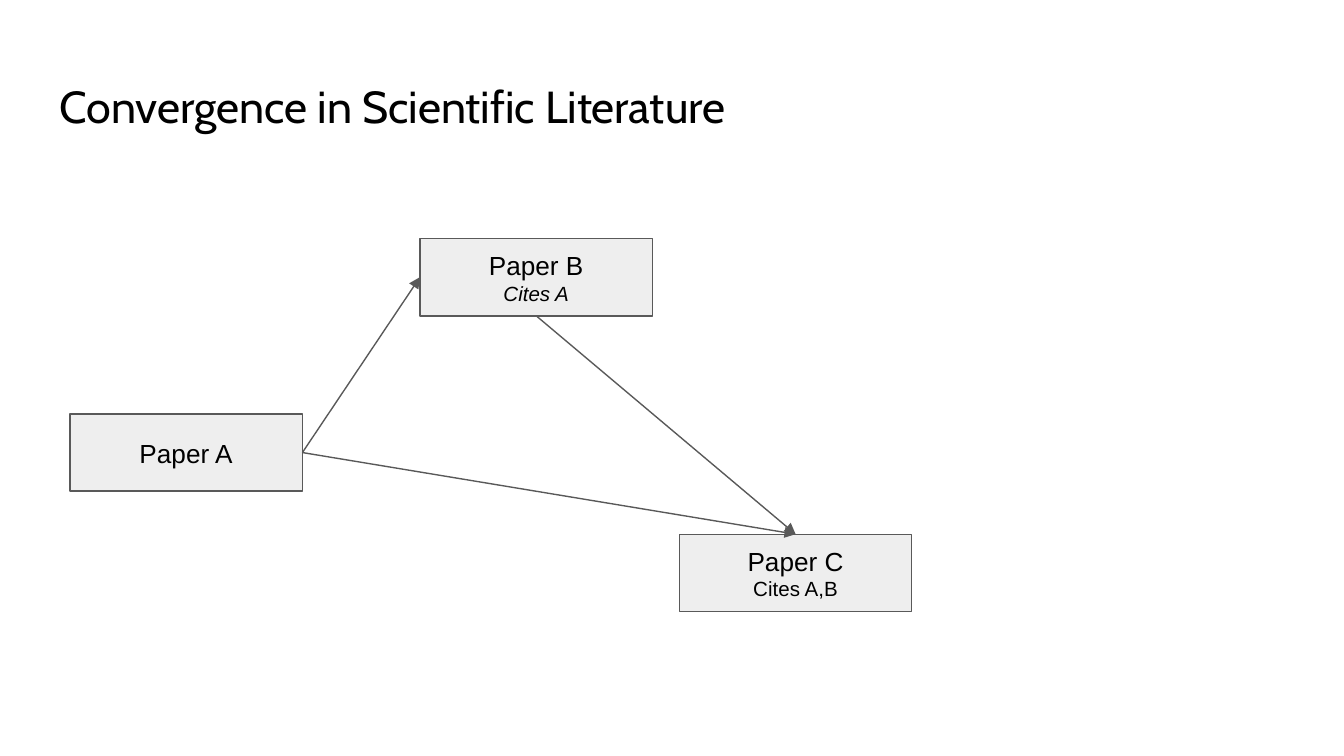
import dataclasses
import typing

import pptx
import pptx.dml.color
import pptx.enum.shapes
import pptx.enum.text
import pptx.oxml.ns
import pptx.util
from lxml import etree

PX = 4572  # EMU in one px, 200 px to the inch
WIDE, HIGH = 346, 115
PAD = 20
COLORS = {"fill": "EEEEEE", "line": "595959", "text": "000000"}
TOP, LEFT, BOTTOM, RIGHT = range(4)


@dataclasses.dataclass
class Run:
    text: str
    size: int
    font: str = "Arial"
    italic: bool = False


@dataclasses.dataclass
class Paper:
    key: str
    x: int
    y: int
    lines: list[Run]


class Cite(typing.NamedTuple):
    start: str
    exit: int
    end: str
    entry: int


PAPERS = [
    Paper("A", 104, 616, [Run("Paper A", 14)]),
    Paper("B", 625, 355, [Run("Paper B", 14), Run("Cites A", 11, italic=True)]),
    Paper("C", 1011, 795, [Run("Paper C", 14), Run("Cites A,B", 11)]),
]
CITES = [
    Cite("A", RIGHT, "B", LEFT),
    Cite("A", RIGHT, "C", TOP),
    Cite("B", BOTTOM, "C", TOP),
]


def px(num: int) -> pptx.util.Emu:
    return pptx.util.Emu(num * PX)


def color(name: str) -> pptx.dml.color.RGBColor:
    return pptx.dml.color.RGBColor.from_string(COLORS[name])


def write(shape, lines: list[Run], align, anchor) -> None:
    """Fill the shape with one paragraph per run."""
    frame = shape.text_frame
    frame.word_wrap = True
    frame.vertical_anchor = anchor
    frame.margin_left = frame.margin_right = px(PAD)
    frame.margin_top = frame.margin_bottom = px(PAD)
    for num, line in enumerate(lines):
        para = frame.add_paragraph() if num else frame.paragraphs[0]
        para.alignment = align
        run = para.add_run()
        run.text = line.text
        run.font.name = line.font
        run.font.size = pptx.util.Pt(line.size)
        run.font.italic = line.italic
        run.font.color.rgb = color("text")


def stroke(line) -> None:
    line.color.rgb = color("line")
    line.width = pptx.util.Pt(0.75)


def draw_title(slide, text: str) -> None:
    box = slide.shapes.add_textbox(px(69), px(97), px(1864), px(125))
    write(box, [Run(text, 24, "Cabin")], pptx.enum.text.PP_ALIGN.LEFT,
          pptx.enum.text.MSO_ANCHOR.TOP)


def draw_paper(slide, paper: Paper):
    box = slide.shapes.add_shape(
        pptx.enum.shapes.MSO_SHAPE.RECTANGLE,
        px(paper.x), px(paper.y), px(WIDE), px(HIGH))
    box.shadow.inherit = False
    box.fill.solid()
    box.fill.fore_color.rgb = color("fill")
    stroke(box.line)
    write(box, paper.lines, pptx.enum.text.PP_ALIGN.CENTER,
          pptx.enum.text.MSO_ANCHOR.MIDDLE)
    return box


def draw_cite(slide, cite: Cite, boxes: dict) -> None:
    link = slide.shapes.add_connector(
        pptx.enum.shapes.MSO_CONNECTOR.STRAIGHT, 0, 0, 0, 0)
    link.begin_connect(boxes[cite.start], cite.exit)
    link.end_connect(boxes[cite.end], cite.entry)
    stroke(link.line)
    qn = pptx.oxml.ns.qn
    props = link._element.spPr
    etree.SubElement(props.find(qn("a:ln")), qn("a:tailEnd"), type="triangle")
    etree.SubElement(props, qn("a:effectLst"))


def main() -> None:
    deck = pptx.Presentation()
    deck.slide_width, deck.slide_height = px(2000), px(1125)
    slide = deck.slides.add_slide(deck.slide_layouts[6])
    draw_title(slide, "Convergence in Scientific Literature")
    boxes = {paper.key: draw_paper(slide, paper) for paper in PAPERS}
    for cite in CITES:
        draw_cite(slide, cite, boxes)
    deck.save("out.pptx")


if __name__ == "__main__":
    main()
